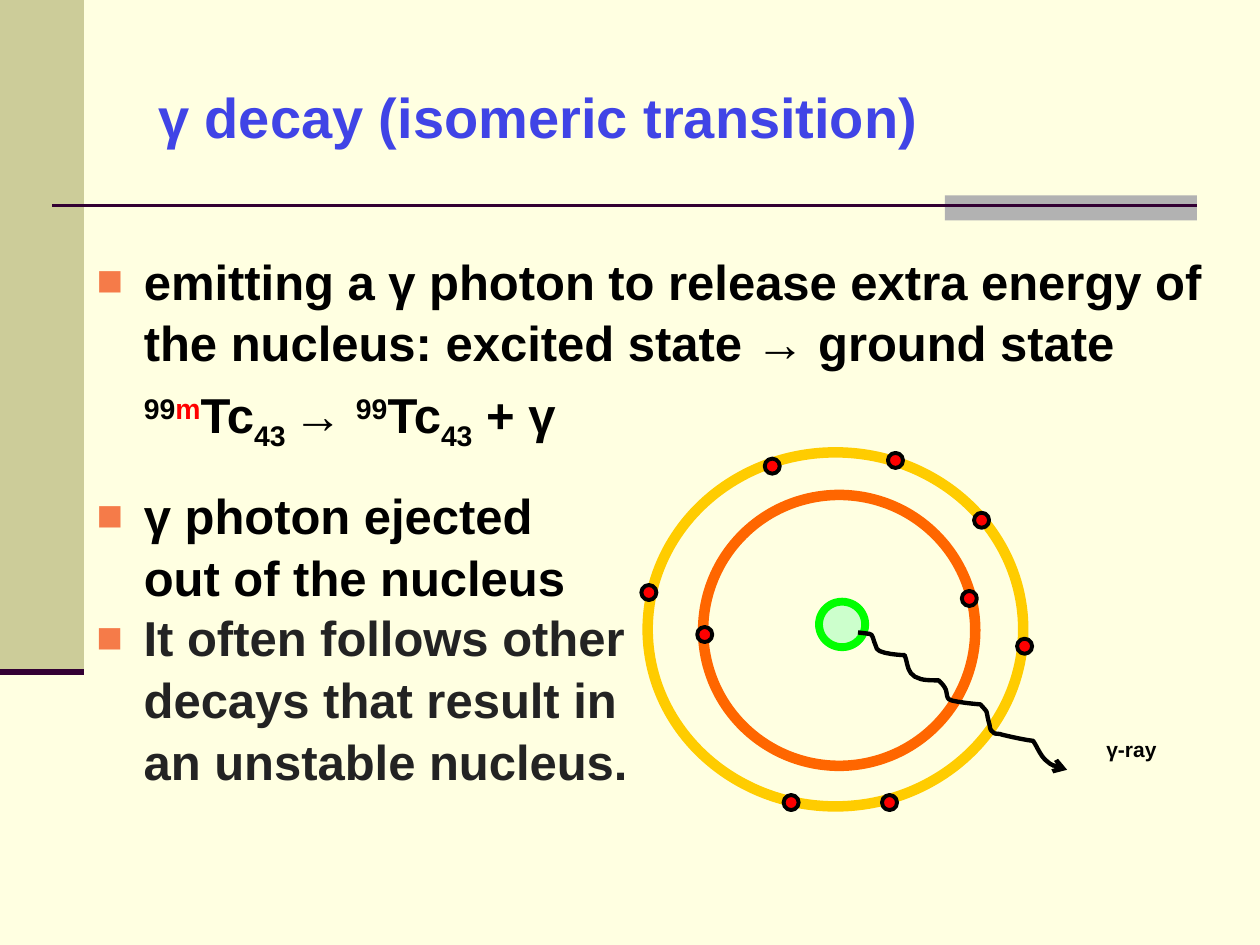
from typing import Any, NamedTuple, Optional

from lxml.etree import SubElement
from pptx import Presentation
from pptx.dml.color import RGBColor as RGB
from pptx.enum.shapes import MSO_CONNECTOR as CONN, MSO_SHAPE as SHAPE
from pptx.enum.text import MSO_ANCHOR as ANCHOR, MSO_AUTO_SIZE as AUTO, PP_ALIGN as ALIGN
from pptx.oxml.ns import qn
from pptx.util import Pt

COLORS = {
    "cream": "FFFFE1", "khaki": "CCCC99", "gray": "B2B2B2", "plum": "330033",
    "title": "4044E6", "bullet": "F57B49", "black": "000000", "dark": "232323",
    "red": "FF0000", "mint": "CCFFCC", "green": "00FF00",
    "orange": "FF6600", "gold": "FFCC00",
}


class Box(NamedTuple):
    x: float
    y: float
    w: float
    h: float


class Form(NamedTuple):
    kind: Any
    box: Box
    fill: Optional[str] = None
    line: Optional[str] = None
    width: float = 0


class Rule(NamedTuple):
    x1: float
    x2: float
    y: float
    width: float


class Run(NamedTuple):
    text: str
    color: str = "black"
    base: int = 0


class Para(NamedTuple):
    runs: list[Run]
    bullet: bool = True
    before: float = 0
    after: float = 0


BANDS = [
    Form(SHAPE.RECTANGLE, Box(0, 0, 48, 384), "khaki"),
    Form(SHAPE.RECTANGLE, Box(540, 111.6, 144, 14.4), "gray"),
]
RULES = [Rule(30, 684, 117.5, 1.5), Rule(0, 48, 384, 3.5)]
ATOM = [
    Form(SHAPE.OVAL, Box(468, 343.8, 26.4, 26), "mint", "green", 4.5),
    Form(SHAPE.OVAL, Box(401.8, 282.8, 155.5, 154.8), None, "orange", 6),
    Form(SHAPE.OVAL, Box(370.1, 258.5, 214.6, 202.3), None, "gold", 6),
]
ELECTRON = 8.6
ELECTRONS = [
    (556.6, 293), (507.4, 258.8), (398.4, 358.3), (437, 262.1), (366.5, 334.3),
    (504, 454.3), (447.8, 454.3), (549.6, 337.7), (581.2, 365),
]
RAY_START = (490.3, 361.4)
RAY_CURVES = [
    ((501.1, 362.9), (496.8, 360.7), (501.1, 370.8)),
    ((502.6, 373.7), (515.5, 374.4), (517, 374.4)),
    ((519.1, 379.4), (517.7, 385.9), (526.3, 388.1)),
    ((529.2, 388.8), (533.5, 388.8), (536.4, 388.8)),
    ((537.8, 390.2), (539.3, 391.7), (540, 393.1)),
    ((541.4, 395.3), (540.7, 398.2), (542.2, 399.6)),
    ((543.6, 401), (558.7, 402.5), (560.2, 402.5)),
    ((565.2, 408.2), (563, 404.6), (565.2, 413.3)),
    ((565.9, 414.7), (565.2, 416.9), (567.4, 418.3)),
    ((568.1, 419.8), (571, 419), (572.4, 419.8)),
    ((578.2, 421.2), (584.6, 422.6), (590.4, 423.4)),
    ((593.3, 427.7), (594.7, 432.7), (599, 435.6)),
    ((600.5, 437), (602.6, 437.8), (604.8, 438.5)),
    ((606.2, 439.2), (609.8, 439.9), (609.8, 439.9)),
]
BODY = [
    Para([Run("emitting a γ photon to release extra energy of the nucleus: "
              "excited state → ground state")], after=5.6),
    Para([Run("99", base=30), Run("m", "red", 30), Run("Tc"), Run("43 ", base=-25),
          Run("→ "), Run("99", base=30), Run("Tc"), Run("43", base=-25), Run(" + γ")],
         bullet=False, after=5.6),
    Para([Run("γ photon ejected\vout of the nucleus")], before=12),
]
NOTE = [Para([Run("It often follows other decays that result in an unstable nucleus.",
                  "dark")])]


def rgb(name: str) -> RGB:
    return RGB.from_string(COLORS[name])


def apply(obj: Any, values: dict[str, Any]) -> None:
    for name, value in values.items():
        setattr(obj, name, value)


def place(sp: Any, box: Box) -> None:
    apply(sp, dict(zip(("left", "top", "width", "height"), map(Pt, box))))


def set_line(sp: Any, color: str, width: float) -> None:
    sp.line.color.rgb = rgb(color)
    sp.line.width = Pt(width)


def add_form(shapes: Any, form: Form) -> None:
    sp = shapes.add_shape(form.kind, *map(Pt, form.box))
    sp.shadow.inherit = False
    if form.fill:
        sp.fill.solid()
        sp.fill.fore_color.rgb = rgb(form.fill)
    else:
        sp.fill.background()
    if form.line:
        set_line(sp, form.line, form.width)
    else:
        sp.line.fill.background()


def add_rule(shapes: Any, rule: Rule) -> None:
    sp = shapes.add_connector(CONN.STRAIGHT, Pt(rule.x1), Pt(rule.y), Pt(rule.x2), Pt(rule.y))
    set_line(sp, "plum", rule.width)
    SubElement(sp._element.spPr, qn("a:effectLst"))


def add_ray(shapes: Any, steps: int = 6) -> None:
    points, start = [], RAY_START
    for c1, c2, end in RAY_CURVES:
        for t in (i / steps for i in range(1, steps + 1)):
            u = 1 - t
            points.append(tuple(
                Pt(u**3 * a + 3 * u * u * t * b + 3 * u * t * t * c + t**3 * d)
                for a, b, c, d in zip(start, c1, c2, end)))
        start = end
    builder = shapes.build_freeform(*map(Pt, RAY_START))
    builder.add_line_segments(points, close=False)
    sp = builder.convert_to_shape()
    sp.shadow.inherit = False
    sp.fill.background()
    set_line(sp, "black", 2.5)
    SubElement(sp.line._get_or_add_ln(), qn("a:tailEnd"), type="arrow")


def add_run(p: Any, run: Run, size: float) -> None:
    first = len(p.runs)
    for i, part in enumerate(run.text.split("\v")):
        if i:
            p.add_line_break()
        p.add_run().text = part
    for r in p.runs[first:]:
        apply(r.font, {"name": "Arial", "size": Pt(size), "bold": True})
        r.font.color.rgb = rgb(run.color)
        if run.base:
            r.font._element.set("baseline", str(run.base * 1000))


def set_bullet(p: Any, shown: bool) -> None:
    pPr = p._p.get_or_add_pPr()
    pPr.set("marL", str(Pt(27)))
    pPr.set("indent", str(Pt(-27 if shown else 0)))
    if not shown:
        SubElement(pPr, qn("a:buNone"))
        return
    SubElement(SubElement(pPr, qn("a:buClr")), qn("a:srgbClr"), val=COLORS["bullet"])
    SubElement(pPr, qn("a:buSzPct"), val="90000")
    SubElement(pPr, qn("a:buFont"), typeface="Arial")
    SubElement(pPr, qn("a:buChar"), char="■")


def fill_list(tf: Any, paras: list[Para]) -> None:
    apply(tf, {"word_wrap": True, "auto_size": AUTO.NONE, "vertical_anchor": ANCHOR.TOP})
    for i, para in enumerate(paras):
        p = tf.add_paragraph() if i else tf.paragraphs[0]
        apply(p, {"alignment": ALIGN.LEFT, "line_spacing": 1.05,
                  "space_before": Pt(para.before), "space_after": Pt(para.after)})
        set_bullet(p, para.bullet)
        for run in para.runs:
            add_run(p, run, 28)


def add_label(tf: Any, text: Run, size: float, align: Any, values: dict[str, Any]) -> None:
    apply(tf, {"word_wrap": True, "auto_size": AUTO.NONE, **values})
    tf.paragraphs[0].alignment = align
    add_run(tf.paragraphs[0], text, size)


def main() -> None:
    prs = Presentation()
    apply(prs, {"slide_width": Pt(720), "slide_height": Pt(540)})
    s = prs.slides.add_slide(prs.slide_layouts[1])
    s.background.fill.solid()
    s.background.fill.fore_color.rgb = rgb("cream")
    title, body = s.placeholders
    place(title, Box(72, 21.6, 612, 90))
    add_label(title.text_frame, Run("γ decay (isomeric transition)", "title"), 32, ALIGN.LEFT,
              {"vertical_anchor": ANCHOR.MIDDLE, "margin_left": Pt(18.3)})
    place(body, Box(48, 138.2, 666, 372.2))
    fill_list(body.text_frame, BODY)
    electrons = [Form(SHAPE.OVAL, Box(x, y, ELECTRON, ELECTRON), "red", "black", 2.25)
                 for x, y in ELECTRONS]
    for form in BANDS:
        add_form(s.shapes, form)
    for rule in RULES:
        add_rule(s.shapes, rule)
    for form in ATOM + electrons:
        add_form(s.shapes, form)
    add_ray(s.shapes)
    label = s.shapes.add_textbox(*map(Pt, Box(608.4, 417.6, 76.3, 34.6)))
    add_label(label.text_frame, Run("γ-ray"), 12, ALIGN.CENTER, {})
    note = s.shapes.add_textbox(*map(Pt, Box(48, 342, 318.2, 144)))
    fill_list(note.text_frame, NOTE)
    prs.save("out.pptx")


if __name__ == "__main__":
    main()
